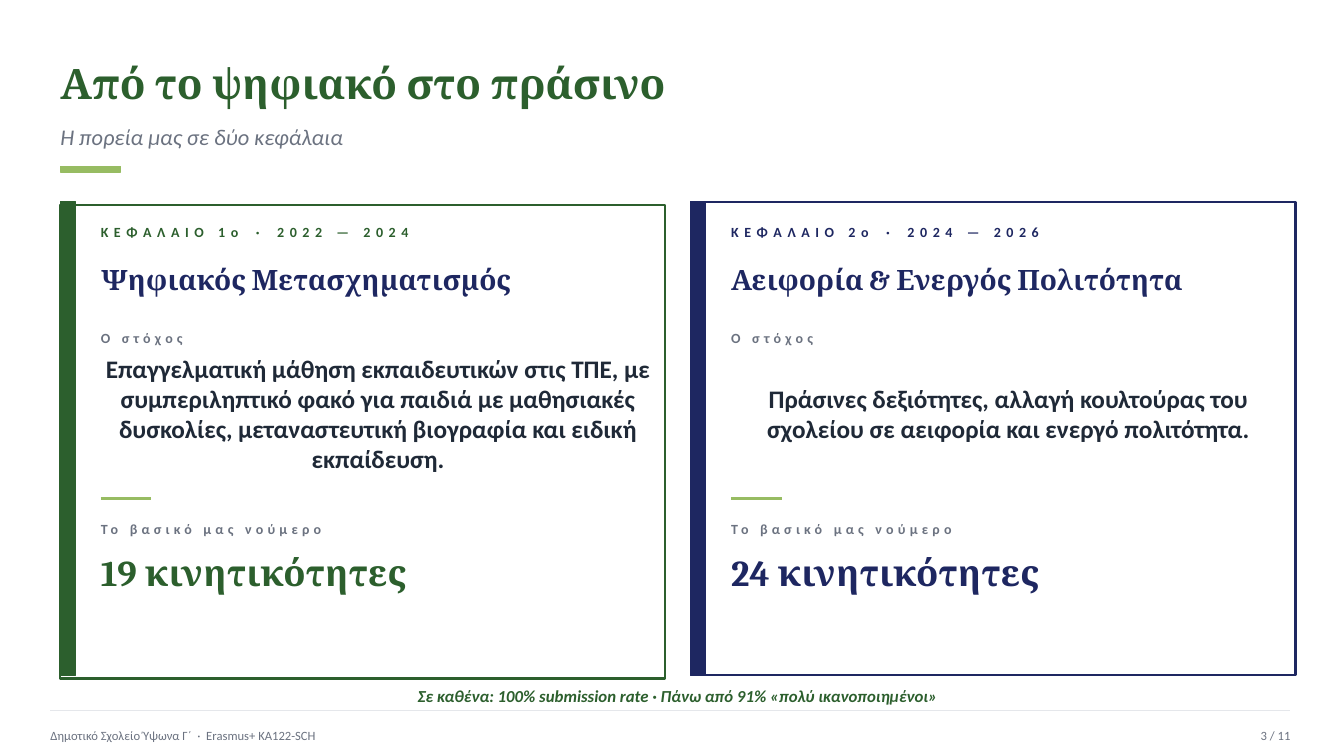
from pptx import Presentation
from pptx.dml.color import RGBColor
from pptx.enum.shapes import MSO_CONNECTOR as Connector, MSO_SHAPE as Shape
from pptx.enum.text import MSO_ANCHOR as Anchor, PP_ALIGN as Align
from pptx.oxml.ns import qn
from pptx.util import Cm, Pt
from lxml.etree import SubElement

GREEN = RGBColor(0x2C, 0x5F, 0x2D)
LIME = RGBColor(0x97, 0xBC, 0x62)
NAVY = RGBColor(0x1E, 0x27, 0x61)
GREY = RGBColor(0x6B, 0x72, 0x80)
INK = RGBColor(0x1F, 0x29, 0x37)
PALE = RGBColor(0xE5, 0xE7, 0xEB)
WHITE = RGBColor(0xFF, 0xFF, 0xFF)


class SlideBuilder:
    heading_font = "Cambria"
    body_font = "Calibri"
    space_width = 0.226

    def __init__(self, page):
        self.page = page

    def text(self, parts, left, top, width, height, size, color, font=body_font,
             bold=False, italic=False, align=Align.LEFT, tracking=0):
        box = self.page.shapes.add_textbox(Cm(left), Cm(top), Cm(width), Cm(height))
        frame = box.text_frame
        frame.word_wrap = True
        frame.vertical_anchor = Anchor.MIDDLE
        frame.margin_left = frame.margin_right = 0
        frame.margin_top = frame.margin_bottom = 0
        para = frame.paragraphs[0]
        para.alignment = align
        wide_gap = tracking + size * self.space_width
        for part in parts:
            span = para.add_run()
            span.text = part
            span.font.name = font
            span.font.size = Pt(size)
            span.font.color.rgb = color
            span.font.bold = bold
            span.font.italic = italic
            spacing = wide_gap if part == " " else tracking
            if spacing:
                span.font._element.set("spc", str(round(spacing * 100)))

    def heading(self, words, left, top, width, height, size, color):
        self.text([words], left, top, width, height, size, color,
                  font=self.heading_font, bold=True)

    def label(self, parts, left, top, color=GREY, tracking=3):
        self.text(parts, left, top, 13.97, 0.76, 10, color, bold=True, tracking=tracking)

    def rectangle(self, left, top, width, height, fill, line, weight=1):
        shape = self.page.shapes.add_shape(
            Shape.RECTANGLE, Cm(left), Cm(top), Cm(width), Cm(height))
        shape.shadow.inherit = False
        shape.fill.solid()
        shape.fill.fore_color.rgb = fill
        shape.line.color.rgb = line
        shape.line.width = Pt(weight)

    def rule(self, left, top, width, color, weight):
        line = self.page.shapes.add_connector(
            Connector.STRAIGHT, Cm(left), Cm(top), Cm(left + width), Cm(top))
        line.line.color.rgb = color
        line.line.width = Pt(weight)
        SubElement(line._element.spPr, qn("a:effectLst"))

    def chapter(self, left, frame_top, color, period, title, goal, figure):
        inner = left + 1.02
        self.rectangle(left, frame_top, 15.24, 11.94, WHITE, color, 1.5)
        self.rectangle(left, 5.08, 0.38, 11.94, color, color)
        self.label(period, inner, 5.46, color, tracking=4)
        self.heading(title, inner, 6.35, 13.97, 1.4, 20, NAVY)
        self.label(["Ο στόχος"], inner, 8.13)
        self.text([goal], inner, 8.89, 13.97, 3.05, 18, INK, bold=True, align=Align.CENTER)
        self.rule(inner, 12.57, 1.27, LIME, 2)
        self.label(["Το βασικό μας νούμερο"], inner, 12.95)
        self.heading(figure, inner, 13.72, 13.97, 1.4, 26, color)


def main():
    deck = Presentation()
    deck.slide_width = Cm(33.86)
    deck.slide_height = Cm(19.05)
    page = deck.slides.add_slide(deck.slide_layouts[6])
    page.background.fill.solid()
    page.background.fill.fore_color.rgb = WHITE
    builder = SlideBuilder(page)

    builder.heading("Από το ψηφιακό στο πράσινο", 1.52, 1.27, 30.48, 1.65, 30, GREEN)
    builder.text(["Η πορεία μας σε δύο κεφάλαια"], 1.52, 2.92, 30.48, 1.02, 16, GREY,
                 italic=True)
    builder.rectangle(1.52, 4.19, 1.52, 0.15, LIME, LIME)

    builder.chapter(
        1.52, 5.16, GREEN, ["ΚΕΦΑΛΑΙΟ 1ο", " ", "·", " ", "2022 — 2024"],
        "Ψηφιακός Μετασχηματισμός",
        "Επαγγελματική μάθηση εκπαιδευτικών στις ΤΠΕ, με συμπεριληπτικό φακό για παιδιά "
        "με μαθησιακές δυσκολίες, μεταναστευτική βιογραφία και ειδική εκπαίδευση.",
        "19 κινητικότητες")
    builder.chapter(
        17.4, 5.08, NAVY, ["ΚΕΦΑΛΑΙΟ 2ο", " ", "·", " ", "2024 — 2026"],
        "Αειφορία & Ενεργός Πολιτότητα",
        "Πράσινες δεξιότητες, αλλαγή κουλτούρας του σχολείου σε αειφορία "
        "και ενεργό πολιτότητα.",
        "24 κινητικότητες")

    builder.text(["Σε καθένα: 100% submission rate · Πάνω από 91% «πολύ ικανοποιημένοι»"],
                 1.52, 17.22, 31.12, 0.64, 12, GREEN, bold=True, italic=True,
                 align=Align.CENTER)
    builder.rule(1.27, 17.91, 31.24, PALE, 0.75)
    builder.text(["Δημοτικό Σχολείο Ύψωνα Γ΄", " ", "·", " ", "Erasmus+ KA122-SCH"],
                 1.27, 18.16, 20.32, 0.76, 9, GREY)
    builder.text(["3 / 11"], 29.97, 18.16, 2.54, 0.76, 9, GREY, align=Align.RIGHT)
    deck.save("out.pptx")


if __name__ == "__main__":
    main()
